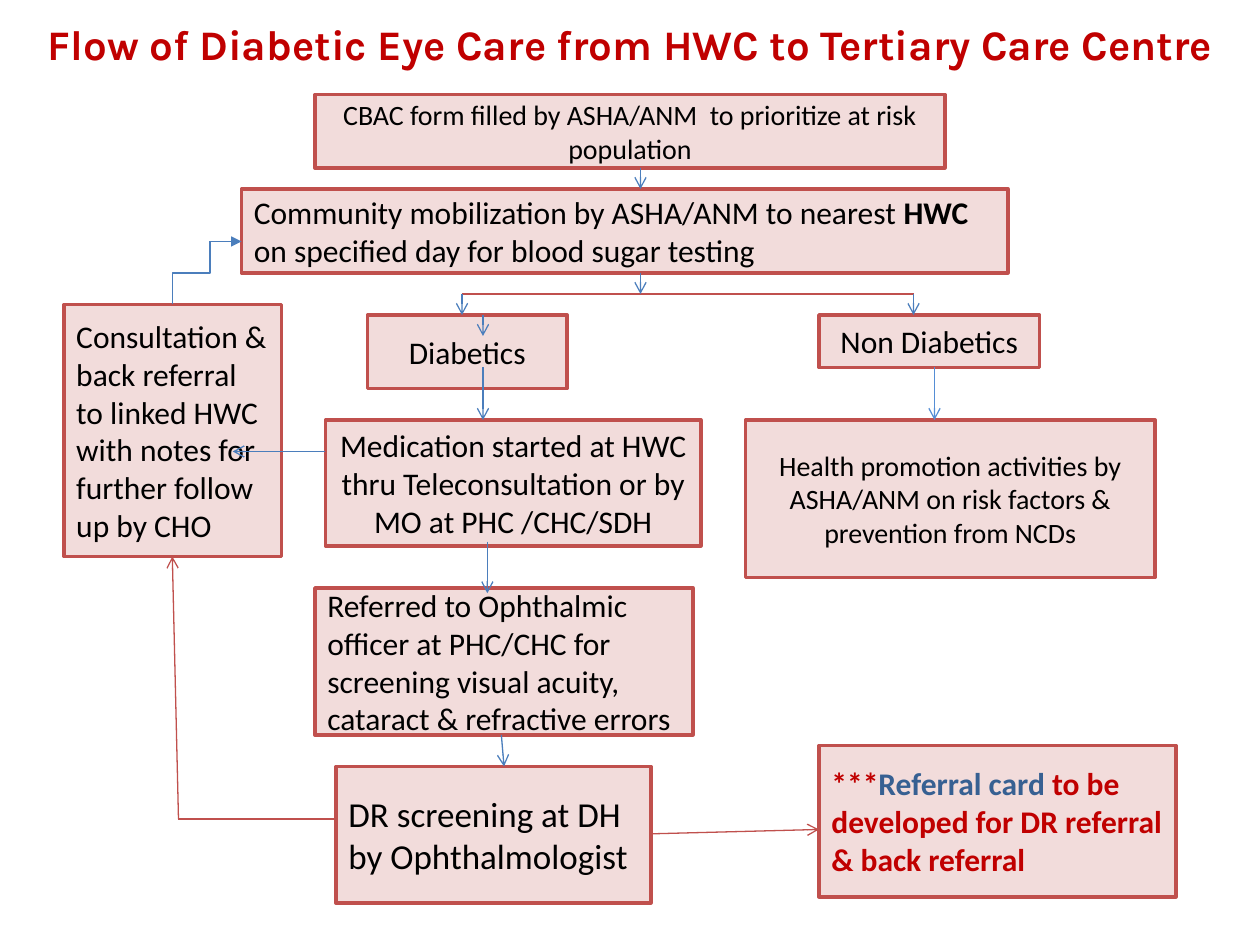
from lxml.etree import SubElement
from pptx import Presentation
from pptx.dml.color import RGBColor
from pptx.enum.shapes import MSO_CONNECTOR as Connector, MSO_SHAPE as Shape
from pptx.enum.text import MSO_ANCHOR as Anchor, PP_ALIGN as Align
from pptx.oxml.ns import qn
from pptx.util import Pt

RED, BLUE, LIGHT_BLUE = "C0504D", "4B7EBC", "558ED5"
PINK, BLACK, DARK_RED, DARK_BLUE = "F2DCDB", "000000", "C00000", "376092"


def color(value):
    return RGBColor.from_string(value)


def write(shape, text, size=18, font="Calibri", fill=BLACK, bold=False, align=Align.LEFT):
    frame = shape.text_frame
    frame.word_wrap = True
    frame.vertical_anchor = Anchor.MIDDLE
    paragraph = frame.paragraphs[0]
    paragraph.alignment = align
    pieces = [(text, {})] if isinstance(text, str) else text
    for words, changes in pieces:
        run = paragraph.add_run()
        run.text = words
        run.font.size = Pt(size)
        run.font.name = font
        run.font.bold = changes.get("bold", bold)
        run.font.color.rgb = color(changes.get("fill", fill))


class FlowSlide:
    box_border = 2
    line_width = 0.75

    def __init__(self, presentation):
        self.slide = presentation.slides.add_slide(presentation.slide_layouts[6])

    def title(self, text, left, top, width, height):
        shape = self.slide.shapes.add_textbox(Pt(left), Pt(top), Pt(width), Pt(height))
        write(shape, text, size=24, font="Karla", fill=DARK_RED, bold=True, align=Align.CENTER)

    def box(self, text, left, top, width, height, **style):
        shape = self.slide.shapes.add_shape(
            Shape.RECTANGLE, Pt(left), Pt(top), Pt(width), Pt(height))
        shape.shadow.inherit = False
        shape.fill.solid()
        shape.fill.fore_color.rgb = color(PINK)
        shape.line.color.rgb = color(RED)
        shape.line.width = Pt(self.box_border)
        write(shape, text, **style)

    def line(self, x1, y1, x2, y2, stroke=BLUE, head=None, kind=Connector.STRAIGHT):
        connector = self.slide.shapes.add_connector(kind, Pt(x1), Pt(y1), Pt(x2), Pt(y2))
        connector.line.color.rgb = color(stroke)
        connector.line.width = Pt(self.line_width)
        properties = connector._element.spPr
        if head:
            SubElement(properties.find(qn("a:ln")), qn("a:tailEnd"), type=head)
        SubElement(properties, qn("a:effectLst"))
        return connector

    def arrow(self, x1, y1, x2, y2, stroke=BLUE):
        self.line(x1, y1, x2, y2, stroke, head="arrow")

    def rising_elbow(self, x1, y1, x2, y2):
        center_x, center_y = (x1 + x2) / 2, (y1 + y2) / 2
        half_width, half_height = (y1 - y2) / 2, (x2 - x1) / 2
        connector = self.line(
            center_x + half_width, center_y + half_height,
            center_x - half_width, center_y - half_height, kind=Connector.ELBOW)
        connector._element.spPr.find(qn("a:xfrm")).set("rot", "5400000")


def main():
    presentation = Presentation()
    presentation.slide_width, presentation.slide_height = Pt(720), Pt(540)
    flow = FlowSlide(presentation)
    centered = {"align": Align.CENTER}

    flow.title("Flow of Diabetic Eye Care from HWC to Tertiary Care Centre", 0, 0, 720, 50)
    flow.line(102, 468, 246, 468, RED)

    flow.box("CBAC form filled by ASHA/ANM  to prioritize at risk population",
             180, 54, 360, 42, size=16, **centered)
    flow.box([("Community mobilization by ASHA/ANM to nearest ", {}),
              ("HWC", {"bold": True}),
              (" on specified day for blood sugar testing", {})], 138, 108, 438, 48)
    flow.box("Diabetics", 210, 180, 114, 42, **centered)
    flow.box("Non Diabetics", 468, 180, 126, 30, **centered)
    flow.box("Medication started at HWC thru Teleconsultation or by MO at PHC /CHC/SDH",
             186, 240, 214.5, 72, **centered)
    flow.box("Consultation & back referral to linked HWC with notes for further follow up by CHO",
             36.5, 174, 124.5, 144)
    flow.box("Health promotion activities by ASHA/ANM on risk factors & prevention from NCDs",
             426, 240, 234, 90, size=16, **centered)
    flow.box("Referred to Ophthalmic officer at PHC/CHC for screening visual acuity, "
             "cataract & refractive errors", 180, 336, 216, 84)
    flow.box([("***", {}), ("Referral card ", {"fill": DARK_BLUE}),
              ("to be developed for DR referral & back referral", {})],
             468, 426, 204, 86.5, fill=DARK_RED, bold=True)
    flow.box("DR screening at DH by Ophthalmologist", 192, 438, 180, 78, size=20)

    flow.line(264, 168, 522, 168, RED)
    for x, top, bottom in [(366, 96, 108), (366, 156, 168), (264, 168, 180), (522, 168, 180),
                           (276, 180, 192), (276, 210, 240), (278.5, 309.5, 339)]:
        flow.arrow(x, top, x, bottom)
    flow.arrow(534, 210, 534, 240, LIGHT_BLUE)
    flow.arrow(186, 258, 133, 258)
    flow.arrow(286.5, 420, 288, 438)
    flow.arrow(102, 468, 98.5, 318, RED)
    flow.arrow(372, 476.5, 468, 474, RED)
    flow.rising_elbow(98.5, 174, 120, 138)
    flow.line(120, 138, 138, 138, head="triangle")

    presentation.save("out.pptx")


if __name__ == "__main__":
    main()
